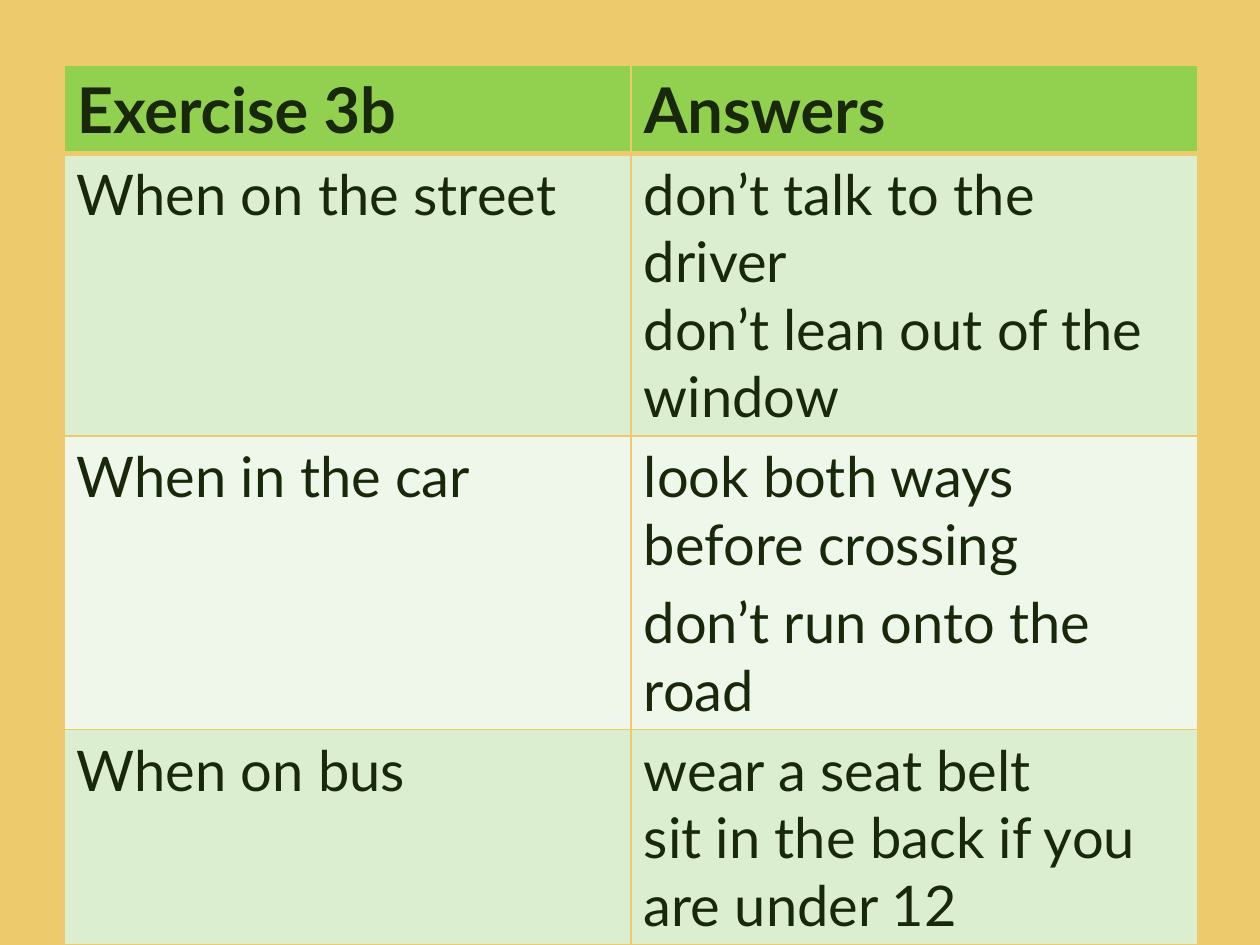
import pptx
import pptx.util
import pptx.dml.color
import pptx.oxml.ns
from lxml import etree

Inches, Pt = pptx.util.Inches, pptx.util.Pt
RGB = pptx.dml.color.RGBColor.from_string

# Content: prompt, answers, space before later answers in points
ROWS = [
    ("Exercise 3b", ["Answers"], 0),
    ("When on the street",
     ["don’t talk to the driver", "don’t lean out of the window"], 0),
    ("When in the car",
     ["look both ways before crossing", "don’t run onto the road"], 6.4),
    ("When on bus",
     ["wear a seat belt", "sit in the back if you are under 12"], 0),
]
HEIGHTS = [0.7, 2.24, 2.33, 1.69]
LEFT, TOP, WIDTH = 0.51, 0.52, 9

THEME = {
    "font": "Lato", "ink": "19280A", "back": "EDCB6D",
    "head": "92D050", "bands": ["DCEED0", "EEF7E9"],
    "head size": 36, "body size": 32, "line": 1, "head line": 3,
}


def add_edge(cell, side, width):
    """Draw one border of a cell, in the background colour."""
    props = cell._tc.get_or_add_tcPr()
    tag = pptx.oxml.ns.qn
    line = etree.SubElement(props, tag("a:ln" + side), w=str(Pt(width)))
    fill = etree.SubElement(line, tag("a:solidFill"))
    etree.SubElement(fill, tag("a:srgbClr"), val=THEME["back"])


def fill_cell(cell, lines, gap, row):
    head = row == 0
    # Borders come before the fill in the cell properties
    for side in "LRTB":
        heavy = (head and side == "B") or (row == 1 and side == "T")
        add_edge(cell, side, THEME["head line" if heavy else "line"])
    cell.fill.solid()
    shade = THEME["head"] if head else THEME["bands"][(row - 1) % 2]
    cell.fill.fore_color.rgb = RGB(shade)

    # Text
    cell.text_frame.text = "\n".join(lines)
    for i, para in enumerate(cell.text_frame.paragraphs):
        if i and gap:
            para.space_before = Pt(gap)
        for run in para.runs:
            run.font.name = THEME["font"]
            run.font.size = Pt(THEME["head size" if head else "body size"])
            run.font.bold = head
            run.font.color.rgb = RGB(THEME["ink"])


def main():
    deck = pptx.Presentation()
    deck.slide_width, deck.slide_height = Inches(10), Inches(7.5)
    slide = deck.slides.add_slide(deck.slide_layouts[6])
    slide.background.fill.solid()
    slide.background.fill.fore_color.rgb = RGB(THEME["back"])

    # Answer table, two equal columns
    table = slide.shapes.add_table(
        len(ROWS), 2, Inches(LEFT), Inches(TOP),
        Inches(WIDTH), Inches(sum(HEIGHTS))).table
    for row, (prompt, answers, gap) in enumerate(ROWS):
        table.rows[row].height = Inches(HEIGHTS[row])
        for col, lines in enumerate([[prompt], answers]):
            fill_cell(table.cell(row, col), lines, gap, row)

    deck.save("out.pptx")


if __name__ == "__main__":
    main()
